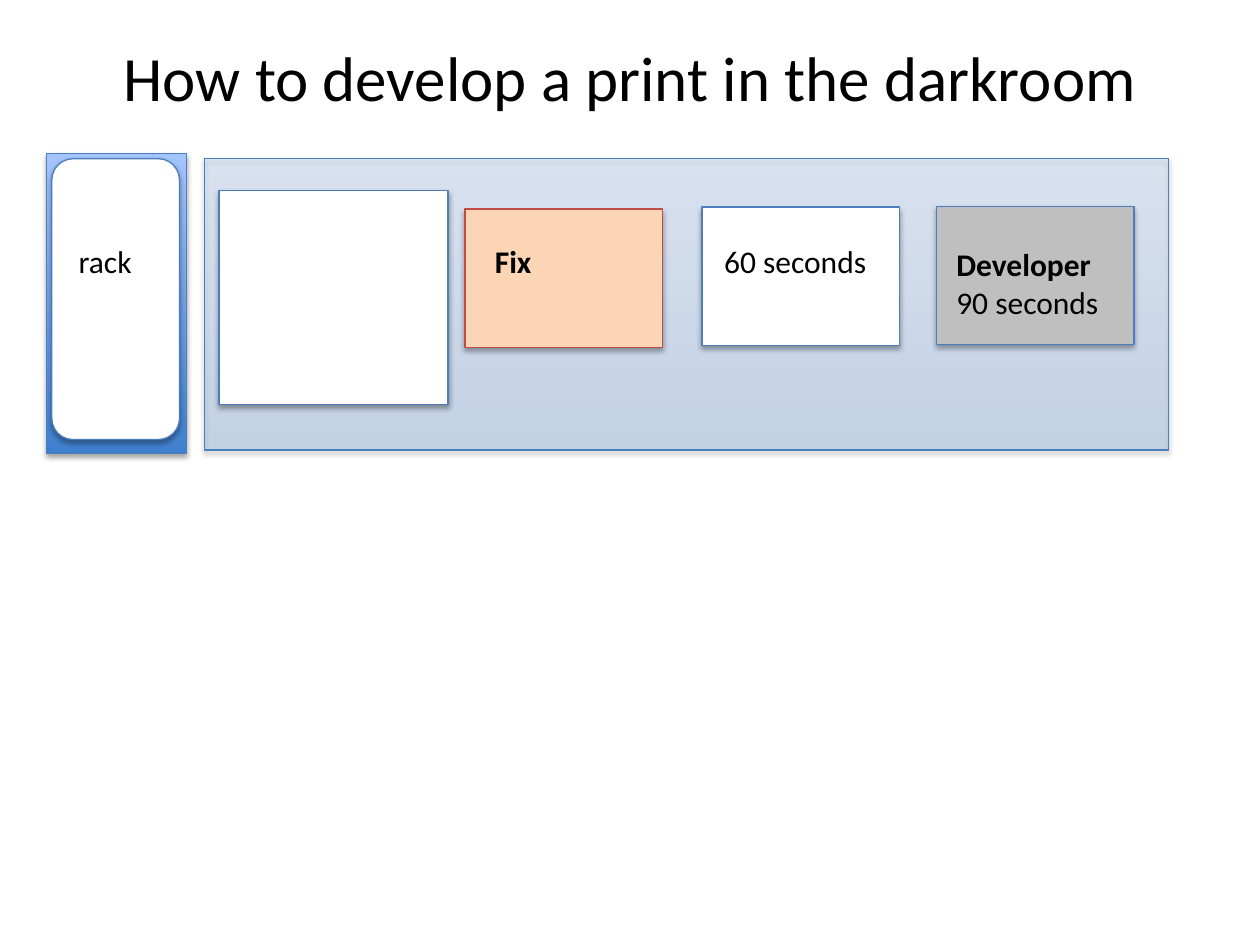
from lxml import etree
from pptx import Presentation
from pptx.dml.color import RGBColor
from pptx.enum.shapes import MSO_SHAPE
from pptx.enum.text import MSO_ANCHOR, PP_ALIGN
from pptx.oxml.ns import qn
from pptx.util import Pt

RECT, ROUNDED = MSO_SHAPE.RECTANGLE, MSO_SHAPE.ROUNDED_RECTANGLE
LEFT, CENTER = PP_ALIGN.LEFT, PP_ALIGN.CENTER
TOP, MIDDLE = MSO_ANCHOR.TOP, MSO_ANCHOR.MIDDLE

BLACK = RGBColor(0x00, 0x00, 0x00)
WHITE = RGBColor(0xFF, 0xFF, 0xFF)
GRAY = RGBColor(0xBF, 0xBF, 0xBF)
PEACH = RGBColor(0xFC, 0xD5, 0xB5)
RED = RGBColor(0xBF, 0x4C, 0x48)
BLUE = RGBColor(0x4B, 0x7E, 0xBC)
DEEP_BLUE = RGBColor(0x3F, 0x80, 0xCE)
PALE_BLUE = RGBColor(0xA4, 0xC4, 0xFF)
FONT = "Calibri"


def add_child(parent, tag, **attrs):
    return etree.SubElement(parent, qn(tag), {k: str(v) for k, v in attrs.items()})


def add_shadow(s):
    s.shadow.inherit = False
    effects = s._element.spPr.find(qn("a:effectLst"))
    shadow = add_child(effects, "a:outerShdw", blurRad=Pt(3.1), dist=Pt(1.8),
                       dir=90 * 60000, rotWithShape=0)
    color = add_child(shadow, "a:srgbClr", val=BLACK)
    add_child(color, "a:alpha", val=35000)


def add_panel(slide, box, fill=None, line=BLUE, shape=RECT, opacity=100):
    """Outlined shape with a shadow; without a fill colour it gets the blue gradient."""
    s = slide.shapes.add_shape(shape, *map(Pt, box))
    if fill is not None:
        s.fill.solid()
        s.fill.fore_color.rgb = fill
    else:
        s.fill.gradient()
        s.fill.gradient_angle = 90
        for stop, color in zip(s.fill.gradient_stops, (DEEP_BLUE, PALE_BLUE)):
            stop.color.rgb = color
        if opacity < 100:
            for color in s._element.spPr.iter(qn("a:srgbClr")):
                add_child(color, "a:alpha", val=opacity * 1000)
    s.line.color.rgb = line
    s.line.width = Pt(0.75)
    add_shadow(s)
    return s


def add_text(slide, box, lines, size=18, align=LEFT, anchor=TOP):
    """Text box with one paragraph for each (text, bold) pair."""
    tf = slide.shapes.add_textbox(*map(Pt, box)).text_frame
    tf.word_wrap = True
    tf.vertical_anchor = anchor
    for i, (text, bold) in enumerate(lines):
        p = tf.paragraphs[0] if i == 0 else tf.add_paragraph()
        p.alignment = align
        r = p.add_run()
        r.text = text
        for name, value in {"name": FONT, "size": Pt(size), "bold": bold}.items():
            setattr(r.font, name, value)
        r.font.color.rgb = BLACK


def add_sink(slide, x, y, w, h):
    """Wet bench with the wash tray and the three chemical trays."""
    add_panel(slide, (x, y, w, h), opacity=23)
    tray_w, tray_h = 113, 79.2
    # Tray offset, fill, line, text offset, text width, lines
    trays = [
        ((149, 28.8), PEACH, RED, (159, 44), 149, [("Fix", True)]),
        ((284.4, 27.6), WHITE, BLUE, (290, 44), 107.3,
         [("60 seconds", False)]),
        ((418.3, 27.2), GRAY, BLUE, (422.7, 46), 149,
         [("Developer", True), ("90 seconds", False)]),
    ]
    for (dx, dy), fill, line, *_ in trays:
        add_panel(slide, (x + dx, y + dy, tray_w, tray_h), fill, line)
    # Wash tray
    add_panel(slide, (x + 8.4, y + 18, 131, 122.4), WHITE)
    for *_, (dx, dy), text_w, lines in trays:
        add_text(slide, (x + dx, y + dy, text_w, 29 * len(lines)), lines)


def add_rack(slide, x, y, w, h):
    """Drying rack beside the sink."""
    add_panel(slide, (x, y, w, h))
    add_panel(slide, (x + 3, y + 3, w - 7, h - 11), WHITE, shape=ROUNDED)
    add_text(slide, (x - 8.6, y + 46.8, w + 4.2, 29), [("rack", False)], align=CENTER)


def main():
    prs = Presentation()
    prs.slide_width, prs.slide_height = Pt(720), Pt(540)
    slide = prs.slides.add_slide(prs.slide_layouts[6])
    add_text(slide, (36, -1.4, 648, 90),
             [("How to develop a print in the darkroom", False)],
             size=36, align=CENTER, anchor=MIDDLE)
    add_sink(slide, 116.7, 90.7, 551, 166.5)
    add_rack(slide, 26.6, 87.7, 80, 171.5)
    prs.save("out.pptx")


if __name__ == "__main__":
    main()
